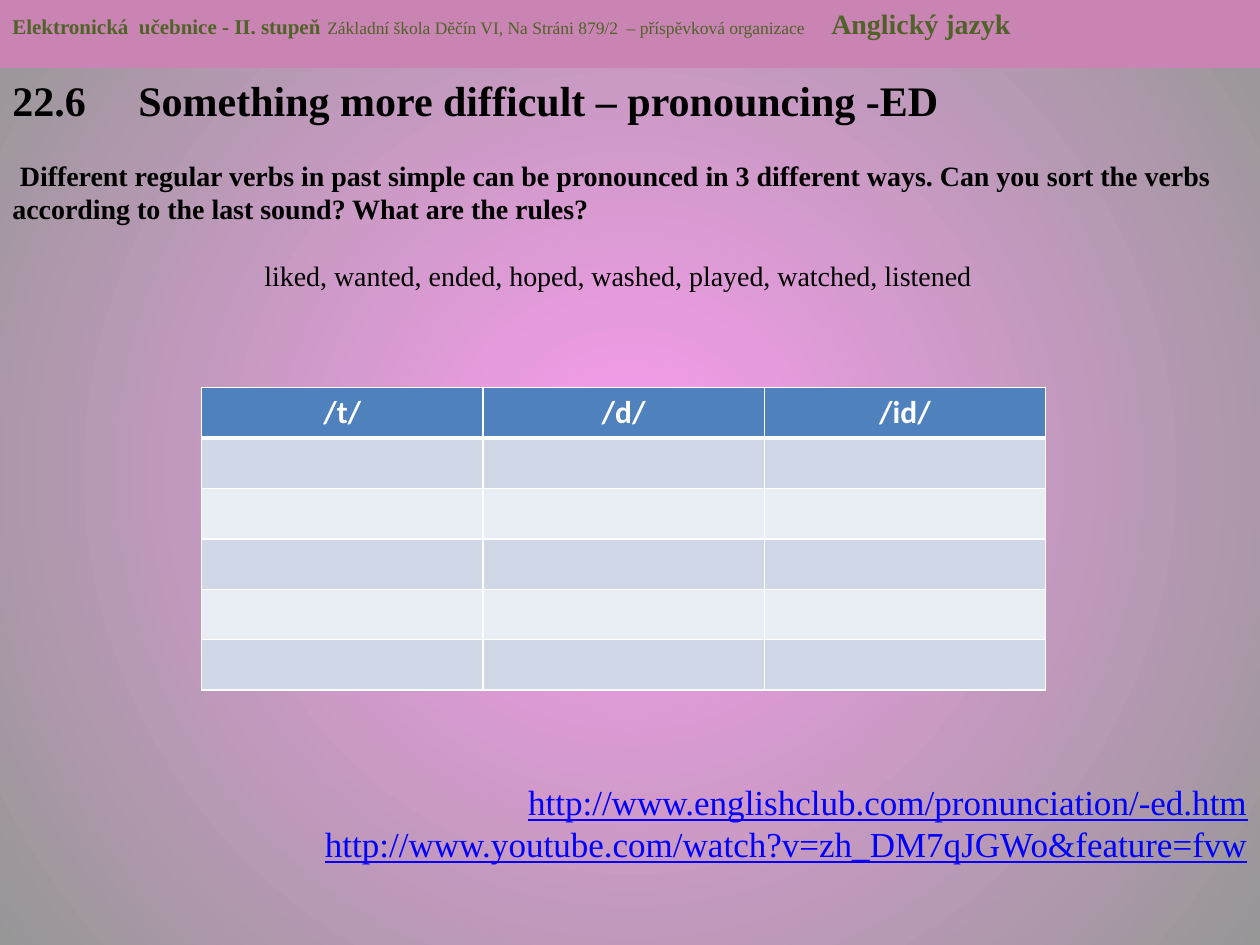
from lxml import etree
from pptx import Presentation
from pptx.dml.color import RGBColor
from pptx.enum.shapes import MSO_SHAPE
from pptx.enum.text import MSO_ANCHOR, PP_ALIGN
from pptx.oxml.ns import qn
from pptx.util import Inches, Pt

LEFT, CENTER, RIGHT = PP_ALIGN.LEFT, PP_ALIGN.CENTER, PP_ALIGN.RIGHT
TOP, RECT = MSO_ANCHOR.TOP, MSO_SHAPE.RECTANGLE
WIDE, HIGH = Inches(10), Inches(7.5)
SERIF, SANS = "Times New Roman", "Calibri"
BAR = 0.072
LEAD = 1.2


def color(code):
    """Turn a hex string into a colour."""
    return RGBColor.from_string(code)


def place(box):
    """Turn shares of the slide into lengths."""
    x, y, w, h = box
    return int(x * WIDE), int(y * HIGH), int(w * WIDE), int(h * HIGH)


def write(par, text, size=16, font=SERIF, fill="000000", bold=False, line=False):
    """Add one formatted run to a paragraph."""
    run = par.add_run()
    run.text = text
    face = run.font
    face.size, face.name, face.bold = Pt(size), font, bold
    face.underline = line
    face.color.rgb = color(fill)


def layout(par, tabs=(), margin=0, indent=0):
    """Set tab stops and indents, in inches, on a paragraph."""
    props = par._p.get_or_add_pPr()
    props.set("marL", str(Inches(margin)))
    props.set("indent", str(Inches(indent)))
    if tabs:
        stops = etree.SubElement(props, qn("a:tabLst"))
        for stop in tabs:
            etree.SubElement(stops, qn("a:tab"), pos=str(Inches(stop)), algn="l")


def backdrop(slide):
    """Fill the slide with a radial gradient."""
    fill = slide.background.fill
    fill.gradient()
    for stop, code in zip(fill.gradient_stops, ("FA9CEF", "979797")):
        stop.color.rgb = color(code)
    grad = slide.background._cSld.find(".//" + qn("a:gradFill"))
    old = grad.find(qn("a:lin"))
    path = etree.Element(qn("a:path"), path="circle")
    etree.SubElement(path, qn("a:fillToRect"), l="50000", t="50000", r="50000", b="50000")
    grad.replace(old, path)


def lesson(slide, box):
    """Write the title, task, verbs and links."""
    frame = slide.shapes.add_textbox(*place(box)).text_frame
    frame.word_wrap = True
    title = dict(size=24, bold=True)
    link = dict(size=20, fill="0000FF", line=True)
    rows = [
        ("22.6\tSomething more difficult – pronouncing -ED", title, LEFT, 0, dict(tabs=[0.84])),
        ("Different regular verbs in past simple can be pronounced in 3 different ways. "
         "Can you sort the verbs according to the last sound? What are the rules?",
         dict(bold=True), LEFT, 19.2, dict(indent=0.06)),
        ("liked, wanted, ended, hoped, washed, played, watched, listened",
         {}, LEFT, 19.2, dict(margin=2)),
        ("http://www.englishclub.com/pronunciation/-ed.htm", link, RIGHT, 279, {}),
        ("http://www.youtube.com/watch?v=zh_DM7qJGWo&feature=fvw", link, RIGHT, 0, {}),
    ]
    for i, (text, style, align, gap, shift) in enumerate(rows):
        par = frame.add_paragraph() if i else frame.paragraphs[0]
        layout(par, **shift)
        par.alignment = align
        par.line_spacing = Pt(style.get("size", 16) * LEAD)
        par.space_before = Pt(gap)
        write(par, text, **style)


def header(slide, box):
    """Draw the top bar with its three labels."""
    bar = slide.shapes.add_shape(RECT, *place(box))
    bar.shadow.inherit = False
    bar.fill.solid()
    bar.fill.fore_color.rgb = color("CA84B3")
    bar.line.fill.background()
    frame = bar.text_frame
    frame.word_wrap, frame.vertical_anchor = True, TOP
    par = frame.paragraphs[0]
    par.alignment = LEFT
    layout(par, tabs=(3.53, 8.25))
    labels = [
        ("Elektronická  učebnice - II. stupeň", 12, True),
        ("\tZákladní škola Děčín VI, Na Stráni 879/2  – příspěvková organizace", 10, False),
        ("\tAnglický jazyk", 16, True),
    ]
    for text, size, bold in labels:
        write(par, text, size=size, bold=bold, fill="4F6228")


def border(cell, base):
    """Draw white borders round a cell, with the given bottom width."""
    props = cell._tc.get_or_add_tcPr()
    for i, (side, width) in enumerate(zip("LRTB", (1, 1, 1, base))):
        line = etree.Element(qn("a:ln" + side), w=str(Pt(width)))
        fill = etree.SubElement(line, qn("a:solidFill"))
        etree.SubElement(fill, qn("a:srgbClr"), val="FFFFFF")
        props.insert(i, line)


def sounds(slide, box, heads, count):
    """Build the sorting table with empty rows under its heads."""
    table = slide.shapes.add_table(count + 1, len(heads), *place(box)).table
    for r in range(count + 1):
        for c, head in enumerate(heads):
            cell = table.cell(r, c)
            cell.fill.solid()
            shade = ("E9EDF4", "D0D8E8")[r % 2] if r else "4F81BD"
            cell.fill.fore_color.rgb = color(shade)
            border(cell, 1 if r else 3)
            if not r:
                par = cell.text_frame.paragraphs[0]
                par.alignment = CENTER
                write(par, head, size=18, font=SANS, fill="FFFFFF", bold=True)


def main():
    """Build and save the slide."""
    deck = Presentation()
    deck.slide_width, deck.slide_height = WIDE, HIGH
    slide = deck.slides.add_slide(deck.slide_layouts[6])
    backdrop(slide)
    lesson(slide, (0, BAR, 1, 1 - BAR))
    header(slide, (0, 0, 1, BAR))
    sounds(slide, (0.16, 0.41, 0.67, 0.32), ("/t/", "/d/", "/id/"), 5)
    deck.save("out.pptx")


if __name__ == "__main__":
    main()
